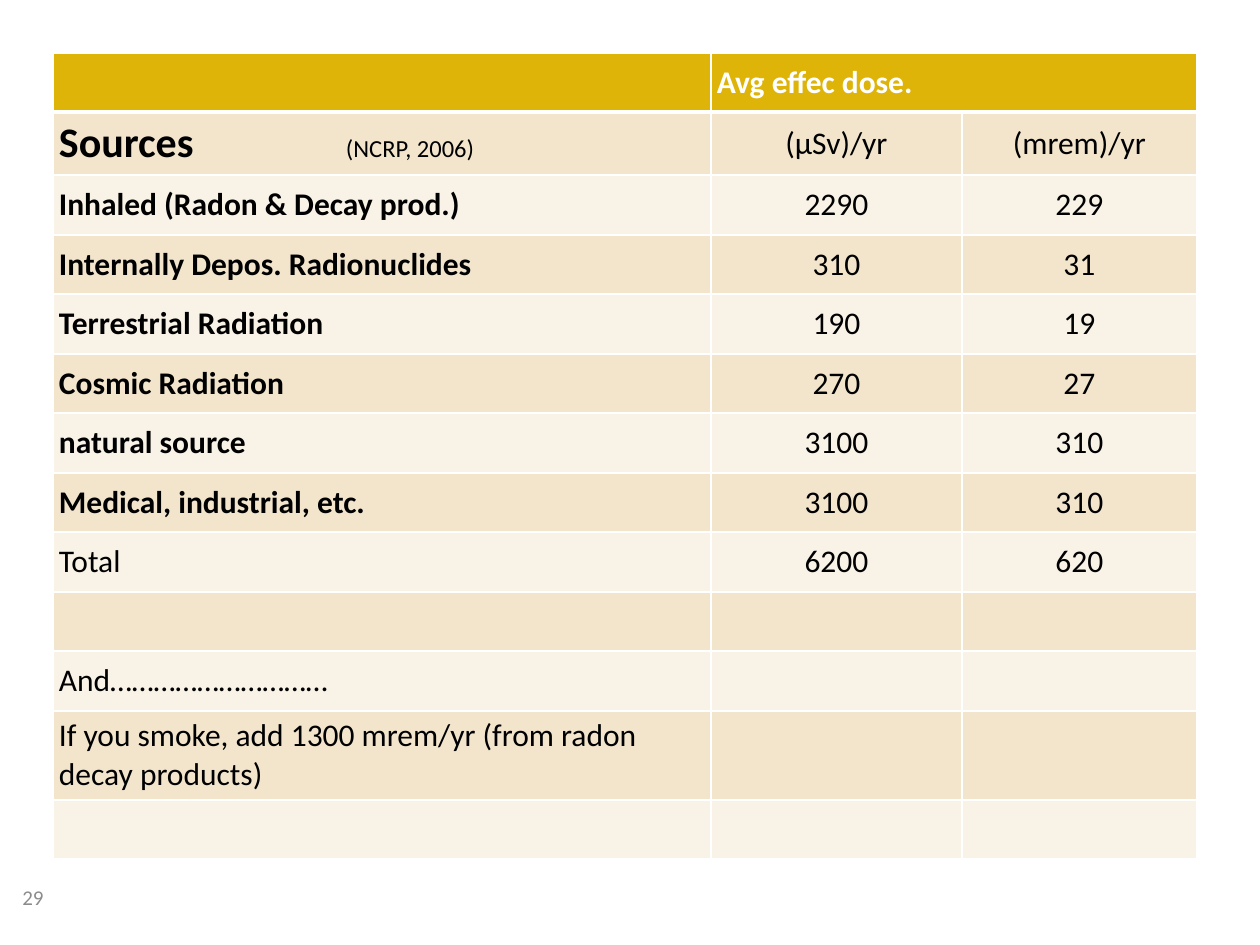
from lxml import etree
from pptx import Presentation
from pptx.dml.color import RGBColor
from pptx.enum.text import MSO_ANCHOR, PP_ALIGN
from pptx.oxml.ns import qn
from pptx.util import Emu, Pt

MIDDLE = MSO_ANCHOR.MIDDLE
LEFT, CENTER = PP_ALIGN.LEFT, PP_ALIGN.CENTER
SCALE = 914400 / 126
BLANK = 6

COLORS = {
    "head": "DEB408",
    "dark": "F2E5CC",
    "light": "F9F2E7",
    "white": "FFFFFF",
    "black": "000000",
    "gray": "8C8C8C",
}

WIDTHS = [658, 251, 235]
EDGES = [53, 112, 175, 235, 294, 354, 413, 473, 532, 592, 651, 711, 799, 858]
HEIGHTS = [low - top for top, low in zip(EDGES, EDGES[1:])]

ROWS = [
    ("", "Avg effec dose.", ""),
    ("Sources", "(µSv)/yr", "(mrem)/yr"),
    ("Inhaled (Radon & Decay prod.)", "2290", "229"),
    ("Internally Depos. Radionuclides", "310", "31"),
    ("Terrestrial Radiation", "190", "19"),
    ("Cosmic Radiation", "270", "27"),
    ("natural source", "3100", "310"),
    ("Medical, industrial, etc.", "3100", "310"),
    ("Total", "6200", "620"),
    ("", "", ""),
    ("And…………………………", "", ""),
    ("If you smoke, add 1300 mrem/yr (from radon decay products)", "", ""),
    ("", "", ""),
]
BOLD_ROWS = range(8)


def px(num):
    return Emu(round(num * SCALE))


def rgb(name):
    return RGBColor.from_string(COLORS[name])


def write(para, text, size=18, color="black", bold=False, align=LEFT):
    para.alignment = align
    run = para.add_run()
    run.text = text
    font = run.font
    font.name, font.size, font.bold = "Calibri", Pt(size), bold
    font.color.rgb = rgb(color)


class Deck:
    def __init__(self, width, height):
        self.prs = Presentation()
        self.prs.slide_width, self.prs.slide_height = px(width), px(height)
        self.slide = self.prs.slides.add_slide(self.prs.slide_layouts[BLANK])

    def label(self, text, left, top, width, height, **style):
        box = self.slide.shapes.add_textbox(px(left), px(top), px(width), px(height))
        frame = box.text_frame
        frame.word_wrap = True
        frame.vertical_anchor = MIDDLE
        write(frame.paragraphs[0], text, **style)

    def grid(self, left, top, widths, heights):
        frame = self.slide.shapes.add_table(
            len(heights), len(widths), px(left), px(top),
            px(sum(widths)), px(sum(heights)))
        table = frame.table
        for col, width in zip(table.columns, widths):
            col.width = px(width)
        for row, height in zip(table.rows, heights):
            row.height = px(height)
        return table

    def border(self, cell, **widths):
        props = cell._tc.get_or_add_tcPr()
        for side in "LRTB":
            line = etree.SubElement(props, qn(f"a:ln{side}"), w=str(Pt(widths.get(side, 1))))
            fill = etree.SubElement(line, qn("a:solidFill"))
            etree.SubElement(fill, qn("a:srgbClr"), val=COLORS["white"])

    def cell(self, cell, text, fill, edges, **style):
        self.border(cell, **edges)
        cell.fill.solid()
        cell.fill.fore_color.rgb = rgb(fill)
        cell.vertical_anchor = MIDDLE
        cell.margin_left = cell.margin_right = px(6)
        cell.margin_top = cell.margin_bottom = px(6)
        if text:
            write(cell.text_frame.paragraphs[0], text, **style)

    def tab(self, para, pos):
        tabs = etree.SubElement(para._p.get_or_add_pPr(), qn("a:tabLst"))
        etree.SubElement(tabs, qn("a:tab"), pos=str(px(pos)), algn="l")


def main():
    deck = Deck(1260, 945)

    # Dose table
    table = deck.grid(53, EDGES[0], WIDTHS, HEIGHTS)
    for r, row in enumerate(ROWS):
        head = r == 0
        fill = "head" if head else "dark" if r % 2 else "light"
        edges = {0: {"B": 3}, 1: {"T": 3}}.get(r, {})
        for c, text in enumerate(row):
            deck.cell(
                table.cell(r, c), text, fill, edges,
                size=24 if text == "Sources" else 18,
                color="white" if head else "black",
                bold=head or (c == 0 and r in BOLD_ROWS),
                align=CENTER if c and not head else LEFT)
    table.cell(0, 1).merge(table.cell(0, 2))

    # Citation beside the row heading
    para = table.cell(1, 0).text_frame.paragraphs[0]
    deck.tab(para, 287)
    write(para, "\t(NCRP, 2006)", size=14)

    # Page number
    deck.label("29", 10, 872, 73, 50, size=12, color="gray")

    deck.prs.save("out.pptx")


if __name__ == "__main__":
    main()
